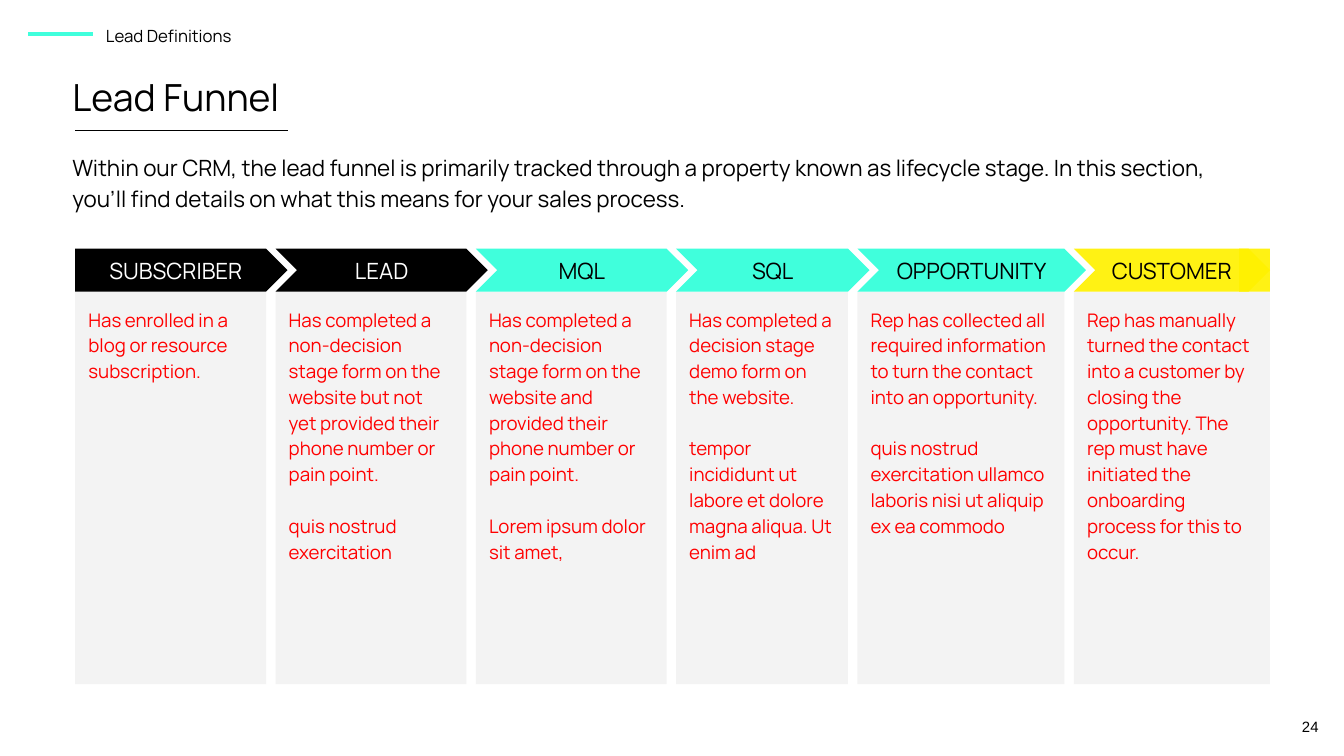
from pptx import Presentation
from pptx.dml.color import RGBColor
from pptx.enum import shapes, text
from pptx.oxml.ns import qn
from pptx.util import Inches, Pt
from lxml import etree

BLACK = RGBColor(0x00, 0x00, 0x00)
WHITE = RGBColor(0xFF, 0xFF, 0xFF)
MINT = RGBColor(0x40, 0xFF, 0xDC)
YELLOW = RGBColor(0xFF, 0xF1, 0x00)
PALE = RGBColor(0xF3, 0xF3, 0xF3)
RED = RGBColor(0xFF, 0x00, 0x00)

PAGE_WIDTH = 10
GAP = 0.07
HEADER_HEIGHT = 0.32
POINT = HEADER_HEIGHT / 2  # arrow tip reaching past the column
BLANK_LINE = 13.8

# Name, column width, header fill, header text colour, paragraphs
STAGES = [
    ("SUBSCRIBER", 1.42, BLACK, WHITE,
     ["Has enrolled in a blog or resource subscription."]),
    ("LEAD", 1.42, BLACK, WHITE,
     ["Has completed a non-decision stage form on the website but not yet "
      "provided their phone number or pain point.",
      "quis nostrud exercitation"]),
    ("MQL", 1.42, MINT, BLACK,
     ["Has completed a non-decision stage form on the website and provided "
      "their phone number or pain point.",
      "Lorem ipsum dolor sit amet,"]),
    ("SQL", 1.28, MINT, BLACK,
     ["Has completed a decision stage demo form on the website.",
      "tempor incididunt ut labore et dolore magna aliqua. Ut enim ad"]),
    ("OPPORTUNITY", 1.54, MINT, BLACK,
     ["Rep has collected all required information to turn the contact into "
      "an opportunity.",
      "quis nostrud exercitation ullamco laboris nisi ut aliquip ex ea commodo"]),
    ("CUSTOMER", 1.46, YELLOW, BLACK,
     ["Rep has manually turned the contact into a customer by closing the "
      "opportunity. The rep must have initiated the onboarding process for "
      "this to occur."]),
]


def write(shape, paragraphs, size, color, font="Manrope", spacing=None,
          align=text.PP_ALIGN.LEFT, anchor=text.MSO_ANCHOR.TOP):
    frame = shape.text_frame
    frame.word_wrap = True
    frame.vertical_anchor = anchor
    frame.margin_left = frame.margin_right = Inches(0.1)
    frame.margin_top = frame.margin_bottom = Inches(0.1)
    for index, words in enumerate(paragraphs):
        para = frame.add_paragraph() if index else frame.paragraphs[0]
        para.alignment = align
        if spacing:
            para.line_spacing = spacing
        if index:
            para.space_before = Pt(BLANK_LINE)
        span = para.add_run()
        span.text = words
        span.font.name = font
        span.font.size = Pt(size)
        span.font.color.rgb = color


def add_text(page, left, top, width, height, words, size, **style):
    box = page.shapes.add_textbox(Inches(left), Inches(top), Inches(width), Inches(height))
    write(box, [words], size, BLACK, **style)


def add_block(page, kind, left, top, width, height, fill, alpha=None):
    block = page.shapes.add_shape(
        kind, Inches(left), Inches(top), Inches(width), Inches(height))
    block.shadow.inherit = False
    block.line.fill.background()
    block.fill.solid()
    block.fill.fore_color.rgb = fill
    if alpha:
        color = block.fill._xPr.find(".//" + qn("a:srgbClr"))
        etree.SubElement(color, qn("a:alpha")).set("val", str(alpha * 1000))
    return block


def add_rule(page, left, top, width, color, weight):
    rule = page.shapes.add_connector(
        shapes.MSO_CONNECTOR.STRAIGHT,
        Inches(left), Inches(top), Inches(left + width), Inches(top))
    rule.line.color.rgb = color
    rule.line.width = Pt(weight)
    etree.SubElement(rule._element.spPr, qn("a:effectLst"))


def add_heading(page, left, top):
    # Section label with its accent, then title and introduction
    add_rule(page, left - 0.23, top - 0.2, 0.48, MINT, 2.25)
    add_text(page, left + 0.25, top - 0.37, 4.03, 0.32, "Lead Definitions", 9, spacing=1.15)
    add_text(page, left, top, 2.37, 0.43, "Lead Funnel", 20)
    add_rule(page, left + 0.12, top + 0.52, 1.58, BLACK, 0.75)
    add_text(page, left, top + 0.57, 9.01, 0.65,
             "Within our CRM, the lead funnel is primarily tracked through a property "
             "known as lifecycle stage. In this section, you’ll find details on what "
             "this means for your sales process.", 12, spacing=1.15)


def add_funnel(page, left, top, height):
    kinds = shapes.MSO_SHAPE
    last = len(STAGES) - 1
    for index, (name, width, fill, ink, details) in enumerate(STAGES):
        # Description column
        column = add_block(page, kinds.RECTANGLE, left, top + HEADER_HEIGHT,
                           width, height - HEADER_HEIGHT, PALE)
        write(column, details, 10, RED, spacing=1.15)

        # Arrow header; the last one stays within its column
        kind = kinds.CHEVRON if index else kinds.PENTAGON
        reach = 0 if index == last else POINT
        alpha = 92 if index == last else None
        header = add_block(page, kind, left, top, width + reach, HEADER_HEIGHT, fill, alpha)
        write(header, [name], 12, ink, align=text.PP_ALIGN.CENTER,
              anchor=text.MSO_ANCHOR.MIDDLE)
        if index == last:
            # Square end over the last arrow tip
            add_block(page, kinds.RECTANGLE, left + width - 0.23, top,
                      0.23, HEADER_HEIGHT, fill, alpha)
        left += width + GAP


def main():
    deck = Presentation()
    deck.slide_width = Inches(PAGE_WIDTH)
    deck.slide_height = Inches(PAGE_WIDTH * 9 / 16)
    page = deck.slides.add_slide(deck.slide_layouts[6])
    add_heading(page, 0.44, 0.45)
    add_funnel(page, 0.56, 1.85, 3.24)
    # Page number
    add_text(page, 9.31, 5.19, 0.6, 0.43, "24", 8, font="Arial",
             align=text.PP_ALIGN.RIGHT, anchor=text.MSO_ANCHOR.MIDDLE)
    deck.save("out.pptx")


if __name__ == "__main__":
    main()
